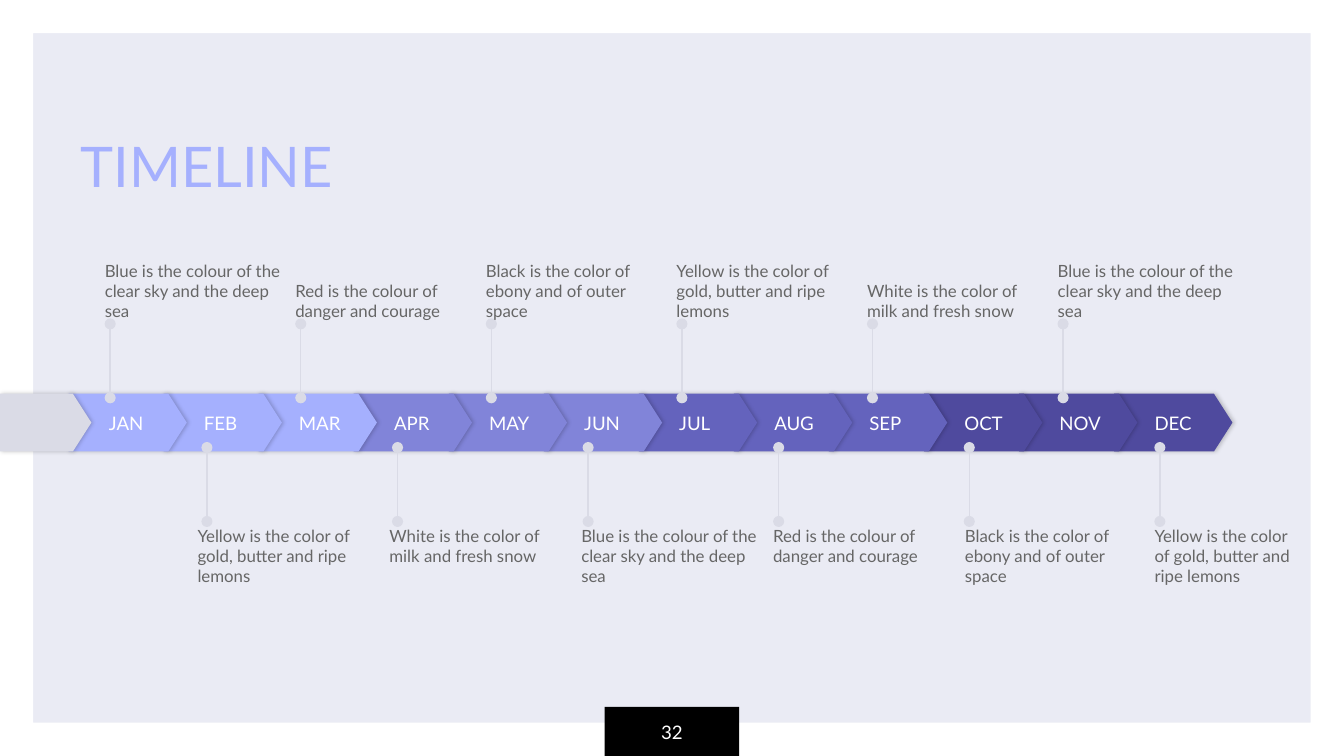
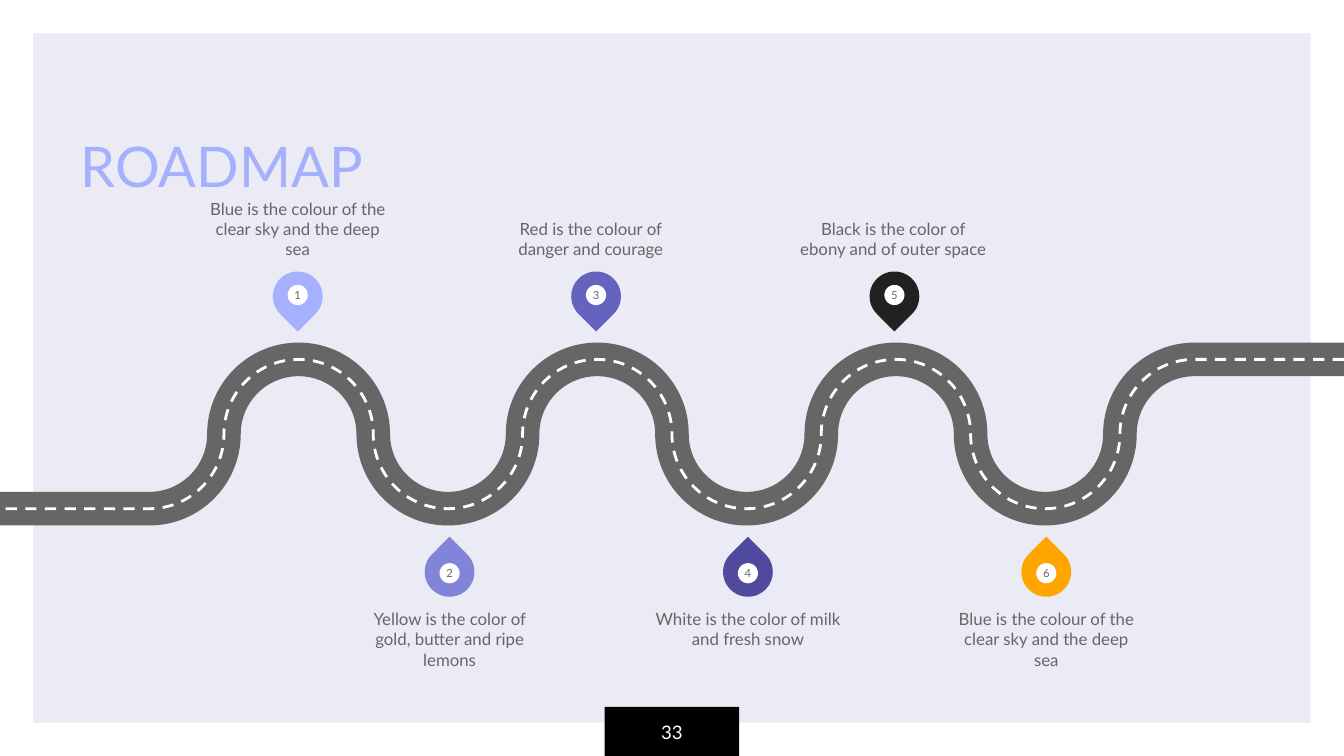
import pptx
import pptx.dml.color
import pptx.enum.dml
import pptx.enum.shapes
import pptx.enum.text
import pptx.oxml
import pptx.oxml.ns
import pptx.util

# Content
BLUE = "Blue is the colour of the clear sky and the deep sea"
RED = "Red is the colour of danger and courage"
BLACK = "Black is the color of ebony and of outer space"
YELLOW = "Yellow is the color of gold, butter and ripe lemons"
WHITE = "White is the color of milk and fresh snow"

QUARTERS = [
    ("A5B0FE", ["JAN", "FEB", "MAR"]),
    ("8184D9", ["APR", "MAY", "JUN"]),
    ("6463BD", ["JUL", "AUG", "SEP"]),
    ("4F4A9E", ["OCT", "NOV", "DEC"]),
]
NOTES_ABOVE = [BLUE, RED, BLACK, YELLOW, WHITE, BLUE]
NOTES_BELOW = [YELLOW, WHITE, BLUE, RED, BLACK, YELLOW]

# Number, pin colour, pin left, note left, note
STOPS_ABOVE = [
    ("1", "A5B0FE", 203, 151, BLUE),
    ("3", "6463BD", 425, 369, RED),
    ("5", "212121", 647, 594, BLACK),
]
STOPS_BELOW = [
    ("2", "8184D9", 316, 264, YELLOW),
    ("4", "4F4A9E", 538, 486, WHITE),
    ("6", "FFA500", 760, 708, BLUE),
]

# Shared style
PX = 9144  # EMU in one px, 100 px to the inch
WIDTH, HEIGHT = 1000, 562.5
FONT = "Lato"
PAPER, PALE, GREY, ACCENT = "EAEBF4", "DADBE6", "666666", "A5B0FE"
SHAPE = pptx.enum.shapes.MSO_SHAPE
ALIGN = pptx.enum.text.PP_ALIGN
ANCHOR = pptx.enum.text.MSO_ANCHOR
NAMESPACE = pptx.oxml.ns.nsdecls("a")


def emu(*lengths):
    return [pptx.util.Emu(round(length * PX)) for length in lengths]


def rgb(color):
    return pptx.dml.color.RGBColor.from_string(color)


def spread(first, last, count):
    return [first + (last - first) * i / (count - 1) for i in range(count)]


def write(shape, text, size=9, color=GREY, align=ALIGN.LEFT,
          anchor=ANCHOR.TOP, margins=(0, 0, 0, 0)):
    frame = shape.text_frame
    frame.word_wrap = True
    frame.vertical_anchor = anchor
    (frame.margin_left, frame.margin_top,
     frame.margin_right, frame.margin_bottom) = emu(*margins)
    paragraph = frame.paragraphs[0]
    paragraph.alignment = align
    run = paragraph.add_run()
    run.text = text
    run.font.name = FONT
    run.font.size = pptx.util.Pt(size)
    run.font.color.rgb = rgb(color)


def add_text(slide, box, text, **text_format):
    write(slide.shapes.add_textbox(*emu(*box)), text, **text_format)


def add_block(shapes, kind, box, color, adjustment=None):
    shape = shapes.add_shape(kind, *emu(*box))
    shape.shadow.inherit = False
    shape.fill.solid()
    shape.fill.fore_color.rgb = rgb(color)
    shape.line.fill.background()
    if adjustment is not None:
        shape.adjustments[0] = adjustment
    return shape


def add_xml(parent, name, attributes="", content=""):
    parent.append(pptx.oxml.parse_xml(
        f"<a:{name} {NAMESPACE} {attributes}>{content}</a:{name}>"))


def add_slide(presentation, title, number):
    slide = presentation.slides.add_slide(presentation.slide_layouts[6])
    slide.background.fill.solid()
    slide.background.fill.fore_color.rgb = rgb(PAPER)
    add_block(slide.shapes, SHAPE.FRAME, (0, 0, WIDTH, HEIGHT), "FFFFFF", 0.044)
    number_box = (450, 526, 100, 37)
    add_block(slide.shapes, SHAPE.RECTANGLE, number_box, "000000")
    add_text(slide, (50, 64, 562, 94), title, size=30, color=ACCENT,
             anchor=ANCHOR.BOTTOM, margins=(10, 10, 10, 10))
    add_text(slide, number_box, number, size=10, color="FFFFFF", align=ALIGN.CENTER,
             anchor=ANCHOR.MIDDLE, margins=(10, 10, 10, 10))
    return slide


# Timeline
def add_arrow(slide, left, width, color):
    arrow = add_block(slide.shapes, SHAPE.PENTAGON, (left, 293, width, 43), color, 0.32)
    effects = arrow._element.spPr.find(pptx.oxml.ns.qn("a:effectLst"))
    add_xml(effects, "outerShdw", 'blurRad="27940" dist="10160" dir="0"',
            '<a:srgbClr val="000000"><a:alpha val="20000"/></a:srgbClr>')
    return arrow


def add_stem(slide, x, start, end):
    stem = slide.shapes.add_connector(
        pptx.enum.shapes.MSO_CONNECTOR.STRAIGHT, *emu(x, start, x, end))
    stem.line.color.rgb = rgb(PALE)
    stem.line.width = pptx.util.Pt(0.75)
    for name in ("headEnd", "tailEnd"):
        add_xml(stem.line._get_or_add_ln(), name, 'type="oval"')
    add_xml(stem._element.spPr, "effectLst")


def build_timeline(presentation):
    slide = add_slide(presentation, "TIMELINE", "32")
    months = [(month, color) for color, names in QUARTERS for month in names]
    lefts = spread(51, 829, len(months))
    # Later months lie underneath, so that each point overlaps the next arrow
    for left, (month, color) in reversed(list(zip(lefts, months))):
        write(add_arrow(slide, left, 88, color), month, size=10, color="FFFFFF",
              anchor=ANCHOR.MIDDLE, margins=(30, 0, 0, 0))
    add_arrow(slide, 0, 68, PALE)

    above = zip(spread(82, 791, 6), spread(78, 787, 6), NOTES_ABOVE)
    for x, left, note in above:
        add_stem(slide, x, 296, 241)
        add_text(slide, (left, 181, 134, 58), note, anchor=ANCHOR.BOTTOM)
    # The last note is set further left and stops at the white frame
    below = zip(spread(154, 863, 6), spread(147, 718, 5) + [859], NOTES_BELOW)
    for x, left, note in below:
        add_stem(slide, x, 388, 333)
        add_text(slide, (left, 391, min(134, 970 - left), 58), note)


# Roadmap
BENDS, ROAD_MIDDLE = 8, 323
PITCH = WIDTH / (BENDS + 1)
RADIUS = PITCH / 2
ARC = 0.5523  # control length of a quarter circle, as a share of its radius


def road_nodes():
    """Ends of the quarter circles, from the last crest back to the first dip."""
    return [(PITCH * BENDS - RADIUS * i, ROAD_MIDDLE + RADIUS * (-1, 0, 1, 0)[i % 4])
            for i in range(2 * BENDS - 1)]


def curve(line, start, end, from_level):
    """Turn one line of the path into a quarter circle."""
    (x0, y0), (x1, y1) = start, end
    dx, dy = ARC * (x1 - x0), ARC * (y1 - y0)
    if from_level:
        controls = [(x0 + dx, y0), (x1, y1 - dy)]
    else:
        controls = [(x0, y0 + dy), (x1 - dx, y1)]
    top = ROAD_MIDDLE - RADIUS
    points = [emu(x, y - top) for x, y in controls + [end]]
    content = "".join(f'<a:pt x="{x}" y="{y}"/>' for x, y in points)
    line.getparent().replace(line, pptx.oxml.parse_xml(
        f"<a:cubicBezTo {NAMESPACE}>{content}</a:cubicBezTo>"))


def add_road(slide, color, width, dash=None):
    nodes = road_nodes()
    builder = slide.shapes.build_freeform(
        *emu(WIDTH, ROAD_MIDDLE - RADIUS), scale=1.0)
    builder.add_line_segments(
        [emu(*point) for point in nodes + [(0, ROAD_MIDDLE + RADIUS)]], close=False)
    road = builder.convert_to_shape()
    lines = list(road._element.iter(pptx.oxml.ns.qn("a:lnTo")))
    for i, line in enumerate(lines[1:-1]):
        curve(line, nodes[i], nodes[i + 1], from_level=i % 2 == 0)
    road.shadow.inherit = False
    road.fill.background()
    road.line.color.rgb = rgb(color)
    road.line.width = pptx.util.Pt(width)
    if dash:
        road.line.dash_style = dash


def add_pin(slide, number, color, left, top, dot_top, rotation):
    pin = slide.shapes.add_group_shape()
    drop = add_block(pin.shapes, SHAPE.TEAR, (left, top, 37, 37), color, 1)
    drop.rotation = rotation
    dot = add_block(pin.shapes, SHAPE.OVAL, (left + 11, dot_top, 15, 15), "FFFFFF")
    write(dot, number, size=6, align=ALIGN.CENTER, anchor=ANCHOR.MIDDLE)


def build_roadmap(presentation):
    slide = add_slide(presentation, "ROADMAP", "33")
    add_road(slide, GREY, 18)
    add_road(slide, "FFFFFF", 1.5, dash=pptx.enum.dml.MSO_LINE.DASH)
    # Stops, pin top, dot top, rotation, note top, note anchor
    rows = [
        (STOPS_ABOVE, 202, 212, 135, 135, ANCHOR.BOTTOM),
        (STOPS_BELOW, 407, 419, 315, 453, ANCHOR.TOP),
    ]
    for stops, pin_top, dot_top, rotation, note_top, anchor in rows:
        for number, color, pin_left, note_left, note in stops:
            add_pin(slide, number, color, pin_left, pin_top, dot_top, rotation)
            add_text(slide, (note_left, note_top, 141, 58), note,
                     align=ALIGN.CENTER, anchor=anchor)


def main():
    presentation = pptx.Presentation()
    presentation.slide_width, presentation.slide_height = emu(WIDTH, HEIGHT)
    build_timeline(presentation)
    build_roadmap(presentation)
    presentation.save("out.pptx")


if __name__ == "__main__":
    main()
